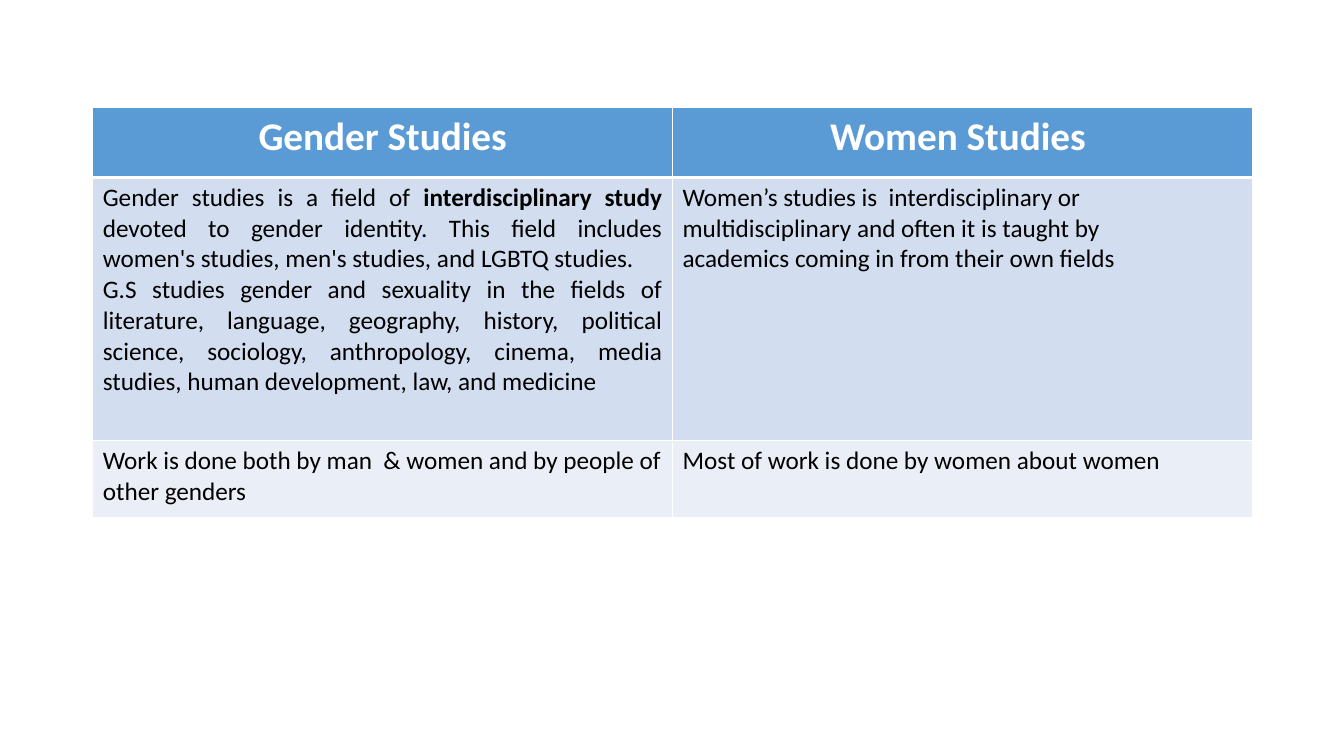
from lxml import etree
from pptx import Presentation
from pptx import util as u
from pptx.dml.color import RGBColor
from pptx.enum import text
from pptx.oxml.ns import qn

PX = 9144
LEFT, CENTER, JUSTIFY = text.PP_ALIGN.LEFT, text.PP_ALIGN.CENTER, text.PP_ALIGN.JUSTIFY


def rgb(value):
    return RGBColor.from_string(value)


class Deck:
    font = "Calibri"
    white, black = "FFFFFF", "000000"
    header_fill = "5B9BD5"
    band_fills = ("D2DEEF", "EAEFF7")

    def __init__(self, width, height):
        self.prs = Presentation()
        self.prs.slide_width, self.prs.slide_height = width * PX, height * PX
        self.s = self.prs.slides.add_slide(self.prs.slide_layouts[6])

    def border(self, cell, side, width):
        ln = etree.SubElement(cell._tc.get_or_add_tcPr(), qn(f"a:ln{side}"), w=str(u.Pt(width)))
        fill = etree.SubElement(ln, qn("a:solidFill"))
        etree.SubElement(fill, qn("a:srgbClr"), val=self.white)

    def paragraph(self, p, parts, align, size, color, bold):
        p.alignment = align
        for i, part in enumerate(parts):
            r = p.add_run()
            r.text = part
            r.font.name, r.font.size = self.font, u.Pt(size)
            r.font.bold = bold or i % 2 == 1
            r.font.color.rgb = rgb(color)

    def cell(self, cell, row, align, paragraphs):
        header = row == 0
        for side, width in (("L", 1), ("R", 1), ("T", 3 if row == 1 else 1), ("B", 3 if header else 1)):
            self.border(cell, side, width)
        cell.fill.solid()
        cell.fill.fore_color.rgb = rgb(self.header_fill if header else self.band_fills[(row - 1) % 2])
        tf = cell.text_frame
        for i, parts in enumerate(paragraphs):
            p = tf.add_paragraph() if i else tf.paragraphs[0]
            self.paragraph(p, parts, align, 28 if header else 18,
                           self.white if header else self.black, header)

    def table(self, x, y, widths, heights, rows):
        frame = self.s.shapes.add_table(len(heights), len(widths), x * PX, y * PX,
                                        sum(widths) * PX, sum(heights) * PX)
        tbl = frame.table
        for col, width in zip(tbl.columns, widths):
            col.width = width * PX
        for i, (height, row) in enumerate(zip(heights, rows)):
            tbl.rows[i].height = height * PX
            for j, (align, paragraphs) in enumerate(row):
                self.cell(tbl.cell(i, j), i, align, paragraphs)


ROWS = [
    [(CENTER, [["Gender Studies"]]), (CENTER, [["Women Studies "]])],
    [
        (JUSTIFY, [
            ["Gender studies is a field of ", "interdisciplinary study ",
             "devoted to gender identity. This field includes women's studies, "
             "men's studies, and LGBTQ studies. "],
            ["G.S studies gender and sexuality in the fields of literature, language, "
             "geography, history, political science, sociology, anthropology, cinema, "
             "media studies, human development, law, and medicine"],
        ]),
        (LEFT, [
            ["Women’s studies is  interdisciplinary or multidisciplinary and often it is taught by"],
            ["academics coming in from their own fields"],
        ]),
    ],
    [
        (LEFT, [["Work is done both by man  & women and by people of other genders"]]),
        (LEFT, [["Most of work is done by women about women"]]),
    ],
]


def main():
    deck = Deck(1333, 750)
    deck.table(92, 107, [575, 575], [69, 261, 77], ROWS)
    deck.prs.save("out.pptx")


if __name__ == "__main__":
    main()
